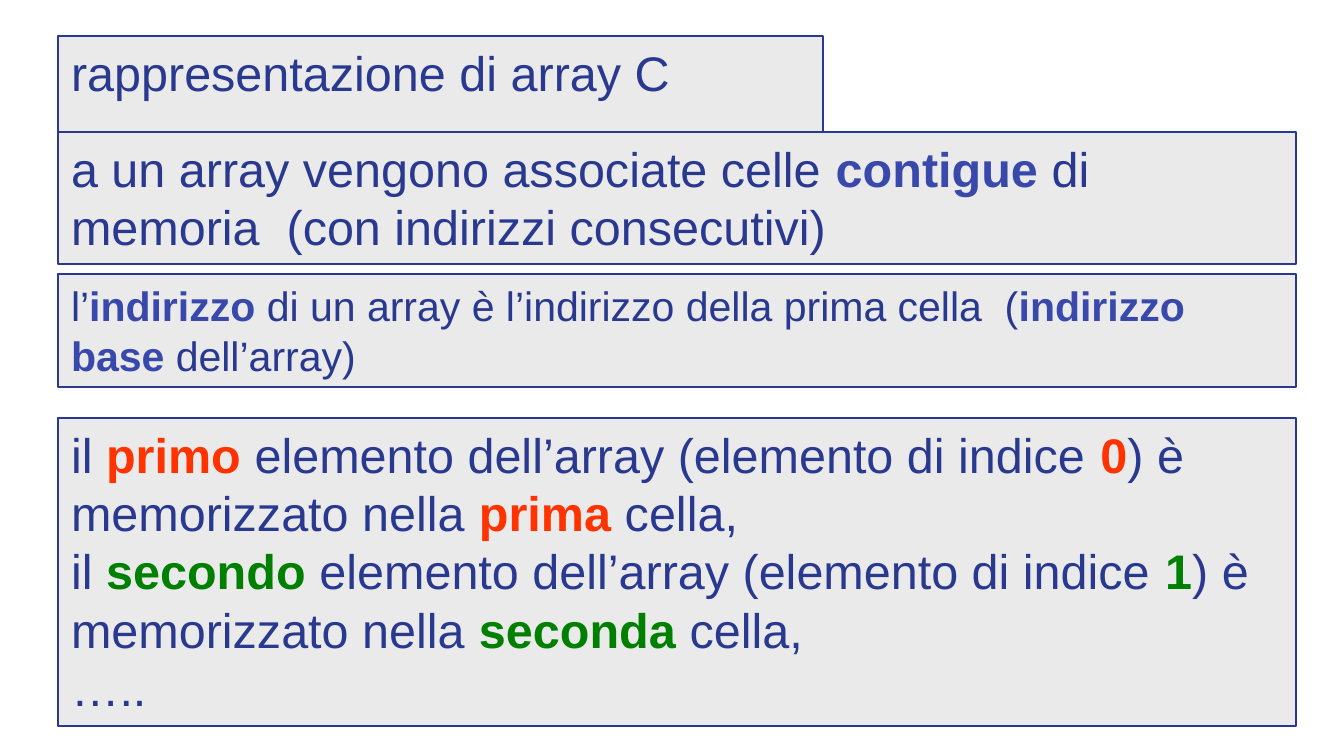
import pptx
import pptx.dml.color
import pptx.enum.shapes
import pptx.enum.text
import pptx.util

EMU_PER_PX = 914400 / 134.4
THEME = {
    "font": "Arial",
    "large": 26,
    "small": 22,
    "line_width": 0.75,
    "fill": "EAEAEA",
    "text": "2A3990",
    "term": "3949AB",
    "first": "FF3300",
    "second": "008000",
}
LEFT, FULL_WIDTH = 58, 1238
INSET_X, INSET_Y = 13, 7


def px(length):
    return pptx.util.Emu(round(length * EMU_PER_PX))


def color(name):
    return pptx.dml.color.RGBColor.from_string(THEME[name])


def_text = "text"
element_lines = [
    [("il ", def_text), (ordinal, accent),
     (" elemento dell’array (elemento di indice ", def_text), (index, accent),
     (") è memorizzato nella ", def_text), (cell, accent), (" cella,", def_text)]
    for ordinal, index, cell, accent in [
        ("primo", "0", "prima", "first"),
        ("secondo", "1", "seconda", "second"),
    ]
]

# Each box: top, width, height, type size, paragraphs of (text, colour) runs.
boxes = [
    (36, 765, 73, "large", [[("rappresentazione di array C", def_text)]]),
    (132, FULL_WIDTH, 132, "large", [[
        ("a un array vengono associate celle ", def_text),
        ("contigue", "term"),
        (" di memoria  (con indirizzi consecutivi)", def_text),
    ]]),
    (274, FULL_WIDTH, 113, "small", [[
        ("l’", def_text),
        ("indirizzo", "term"),
        (" di un array è l’indirizzo della prima cella  (", def_text),
        ("indirizzo base", "term"),
        (" dell’array)", def_text),
    ]]),
    (418, FULL_WIDTH, 308, "large", element_lines + [[("…..", def_text)]]),
]

frame_format = {
    "word_wrap": True,
    "auto_size": pptx.enum.text.MSO_AUTO_SIZE.SHAPE_TO_FIT_TEXT,
    "vertical_anchor": pptx.enum.text.MSO_ANCHOR.TOP,
    "margin_left": px(INSET_X),
    "margin_right": px(INSET_X),
    "margin_top": px(INSET_Y),
    "margin_bottom": px(INSET_Y),
}

presentation = pptx.Presentation()
presentation.slide_width = px(1344)
presentation.slide_height = px(756)
title_only_layout = presentation.slide_layouts[5]
slide = presentation.slides.add_slide(title_only_layout)

for number, (top, width, height, size, paragraphs) in enumerate(boxes):
    bounds = [px(length) for length in (LEFT, top, width, height)]
    if number == 0:
        shape = slide.shapes.title
        shape.left, shape.top, shape.width, shape.height = bounds
    else:
        shape = slide.shapes.add_shape(
            pptx.enum.shapes.MSO_SHAPE.RECTANGLE, *bounds)
    shape.shadow.inherit = False
    shape.fill.solid()
    shape.fill.fore_color.rgb = color("fill")
    shape.line.color.rgb = color("text")
    shape.line.width = pptx.util.Pt(THEME["line_width"])

    text_frame = shape.text_frame
    for name, value in frame_format.items():
        setattr(text_frame, name, value)
    for position, runs in enumerate(paragraphs):
        paragraph = text_frame.add_paragraph() if position else text_frame.paragraphs[0]
        paragraph.alignment = pptx.enum.text.PP_ALIGN.LEFT
        for text, color_name in runs:
            run = paragraph.add_run()
            run.text = text
            run_format = {
                "name": THEME["font"],
                "size": pptx.util.Pt(THEME[size]),
                "bold": color_name != def_text,
            }
            for name, value in run_format.items():
                setattr(run.font, name, value)
            run.font.color.rgb = color(color_name)

presentation.save("out.pptx")
